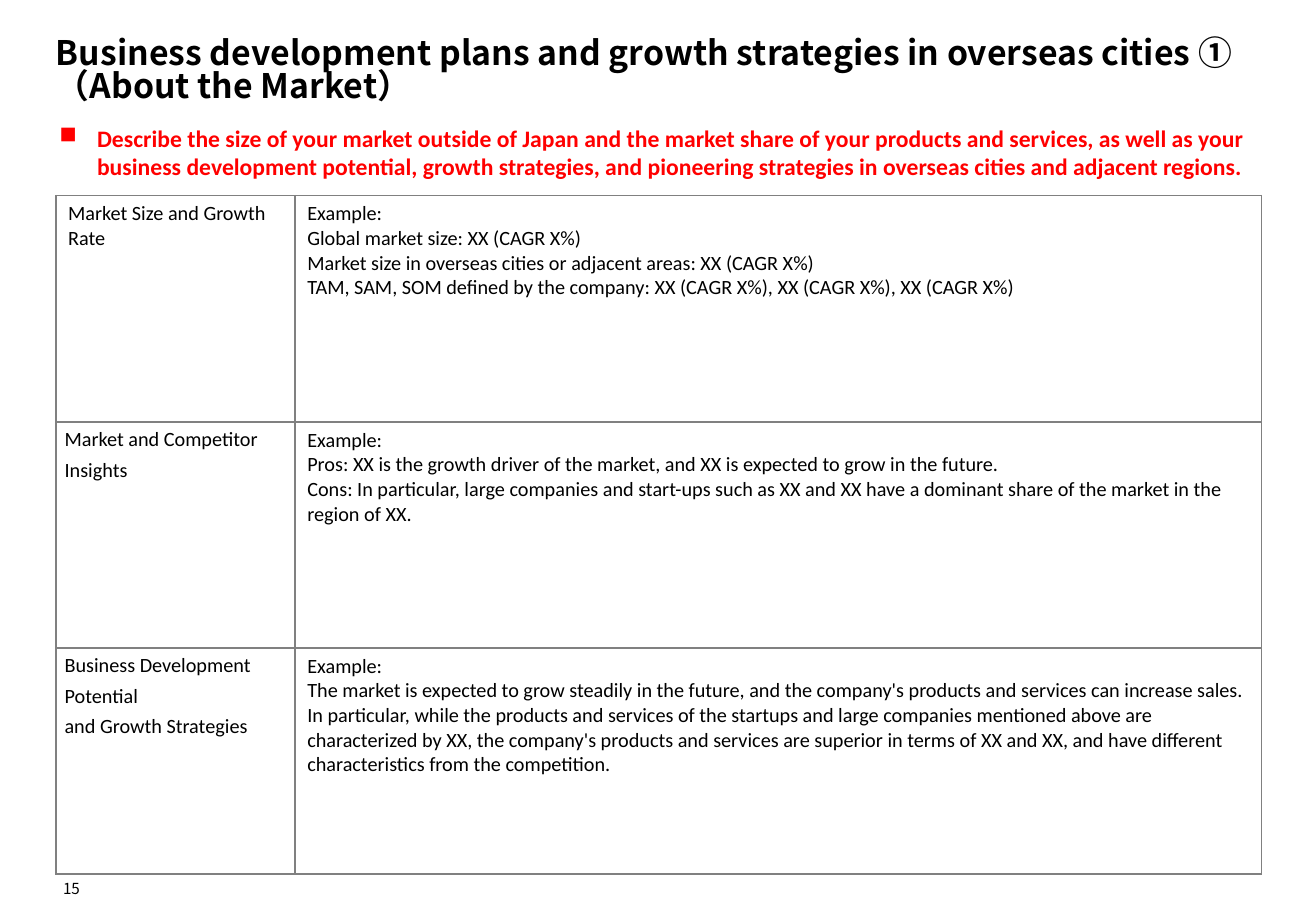
from lxml import etree
from pptx import Presentation
from pptx import util as u
from pptx.dml.color import RGBColor
from pptx.enum import text
from pptx.oxml.ns import qn

BLACK = RGBColor(0x00, 0x00, 0x00)
RED = RGBColor(0xFF, 0x00, 0x00)
WHITE = RGBColor(0xFF, 0xFF, 0xFF)
GRAY = RGBColor(0x80, 0x80, 0x80)
HEADING_FONT = "Noto Sans CJK JP"
BODY_FONT = "Calibri"
LEFT, WIDTH = u.Cm(1.17), u.Cm(25.2)

TITLE_LINES = [
    "Business development plans and growth strategies in overseas cities ①",
    "（About the Market）",
]
INSTRUCTION = (
    "Describe the size of your market outside of Japan and the market share of your "
    "products and services, as well as your business development potential, growth "
    "strategies, and pioneering strategies in overseas cities and adjacent regions."
)
TOPICS = [
    (["Market Size and Growth Rate"],
     ["Example:",
      "Global market size: XX (CAGR X%)",
      "Market size in overseas cities or adjacent areas: XX (CAGR X%)",
      "TAM, SAM, SOM defined by the company: XX (CAGR X%), XX (CAGR X%), XX (CAGR X%)"]),
    (["Market and Competitor", "Insights"],
     ["Example:",
      "Pros: XX is the growth driver of the market, and XX is expected to grow in the future.",
      "Cons: In particular, large companies and start-ups such as XX and XX have a dominant "
      "share of the market in the region of XX."]),
    (["Business Development", "Potential", "and Growth Strategies"],
     ["Example:",
      "The market is expected to grow steadily in the future, and the company's products and "
      "services can increase sales. In particular, while the products and services of the "
      "startups and large companies mentioned above are characterized by XX, the company's "
      "products and services are superior in terms of XX and XX, and have different "
      "characteristics from the competition."]),
]


def add_run(paragraph, words, size, font_name=BODY_FONT, color=BLACK, bold=False):
    run = paragraph.add_run()
    run.text = words
    run.font.size = u.Pt(size)
    run.font.name = font_name
    run.font.bold = bold
    run.font.color.rgb = color
    east_asian = etree.Element(qn("a:ea"), typeface=font_name)
    run.font._element.find(qn("a:latin")).addnext(east_asian)


def set_frame(frame, anchor, margin=0, wrap=True):
    frame.auto_size = text.MSO_AUTO_SIZE.NONE
    frame.word_wrap = wrap
    frame.vertical_anchor = anchor
    frame.margin_left = frame.margin_right = margin
    frame.margin_top = frame.margin_bottom = margin


def add_title(slide):
    title = slide.shapes.title
    title.left, title.top = LEFT, u.Cm(0.51)
    title.width, title.height = WIDTH, u.Cm(1.7)
    set_frame(title.text_frame, text.MSO_ANCHOR.BOTTOM)
    paragraph = title.text_frame.paragraphs[0]
    paragraph.alignment = text.PP_ALIGN.LEFT
    paragraph.line_spacing = 0.82
    for index, line in enumerate(TITLE_LINES):
        if index:
            paragraph.add_line_break()
        add_run(paragraph, line, 20, HEADING_FONT, bold=True)


def add_instruction(slide):
    box = slide.shapes.add_textbox(u.Cm(1.14), u.Cm(2.24), WIDTH, u.Cm(1.88))
    set_frame(box.text_frame, text.MSO_ANCHOR.MIDDLE, u.Cm(0.1))
    paragraph = box.text_frame.paragraphs[0]
    properties = paragraph._p.get_or_add_pPr()
    properties.set("marL", str(u.Cm(0.79)))
    properties.set("indent", str(-u.Cm(0.79)))
    etree.SubElement(properties, qn("a:buChar"), char="■")
    add_run(paragraph, INSTRUCTION, 14, color=RED, bold=True)


def set_borders(cell):
    properties = cell._tc.get_or_add_tcPr()
    for index, side in enumerate(("lnL", "lnR", "lnT", "lnB")):
        line = etree.Element(qn(f"a:{side}"), w=str(u.Pt(1)))
        fill = etree.SubElement(line, qn("a:solidFill"))
        etree.SubElement(fill, qn("a:srgbClr"), val=str(GRAY))
        properties.insert(index, line)


def fill_cell(cell, lines, spaced=False):
    cell.fill.solid()
    cell.fill.fore_color.rgb = WHITE
    set_borders(cell)
    if spaced:
        cell.margin_left = cell.margin_right = u.Cm(0.18)
        cell.margin_top = cell.margin_bottom = 0
    frame = cell.text_frame
    for index, line in enumerate(lines):
        paragraph = frame.add_paragraph() if index else frame.paragraphs[0]
        if spaced:
            paragraph.alignment = text.PP_ALIGN.JUSTIFY
            paragraph.line_spacing = u.Pt(18)
        add_run(paragraph, line, 12)


def add_topic_table(slide):
    table = slide.shapes.add_table(
        len(TOPICS), 2, LEFT, u.Cm(4.09), WIDTH, u.Cm(14.19)).table
    table.first_row = table.horz_banding = False
    table.columns[0].width = u.Cm(5)
    table.columns[1].width = u.Cm(20.2)
    for index, (label, example) in enumerate(TOPICS):
        table.rows[index].height = u.Cm(4.73)
        fill_cell(table.cell(index, 0), label, spaced=len(label) > 1)
        fill_cell(table.cell(index, 1), example)


def add_page_number(slide):
    box = slide.shapes.add_textbox(LEFT, u.Cm(18.29), u.Cm(0.5), u.Cm(0.48))
    set_frame(box.text_frame, text.MSO_ANCHOR.BOTTOM, wrap=False)
    paragraph = box.text_frame.paragraphs[0]
    paragraph.alignment = text.PP_ALIGN.RIGHT
    add_run(paragraph, "15", 9, HEADING_FONT)


def main():
    presentation = Presentation()
    presentation.slide_width = u.Cm(27.51)
    presentation.slide_height = u.Cm(19.05)
    slide = presentation.slides.add_slide(presentation.slide_layouts[5])
    add_title(slide)
    add_instruction(slide)
    add_topic_table(slide)
    add_page_number(slide)
    presentation.save("out.pptx")


if __name__ == "__main__":
    main()
